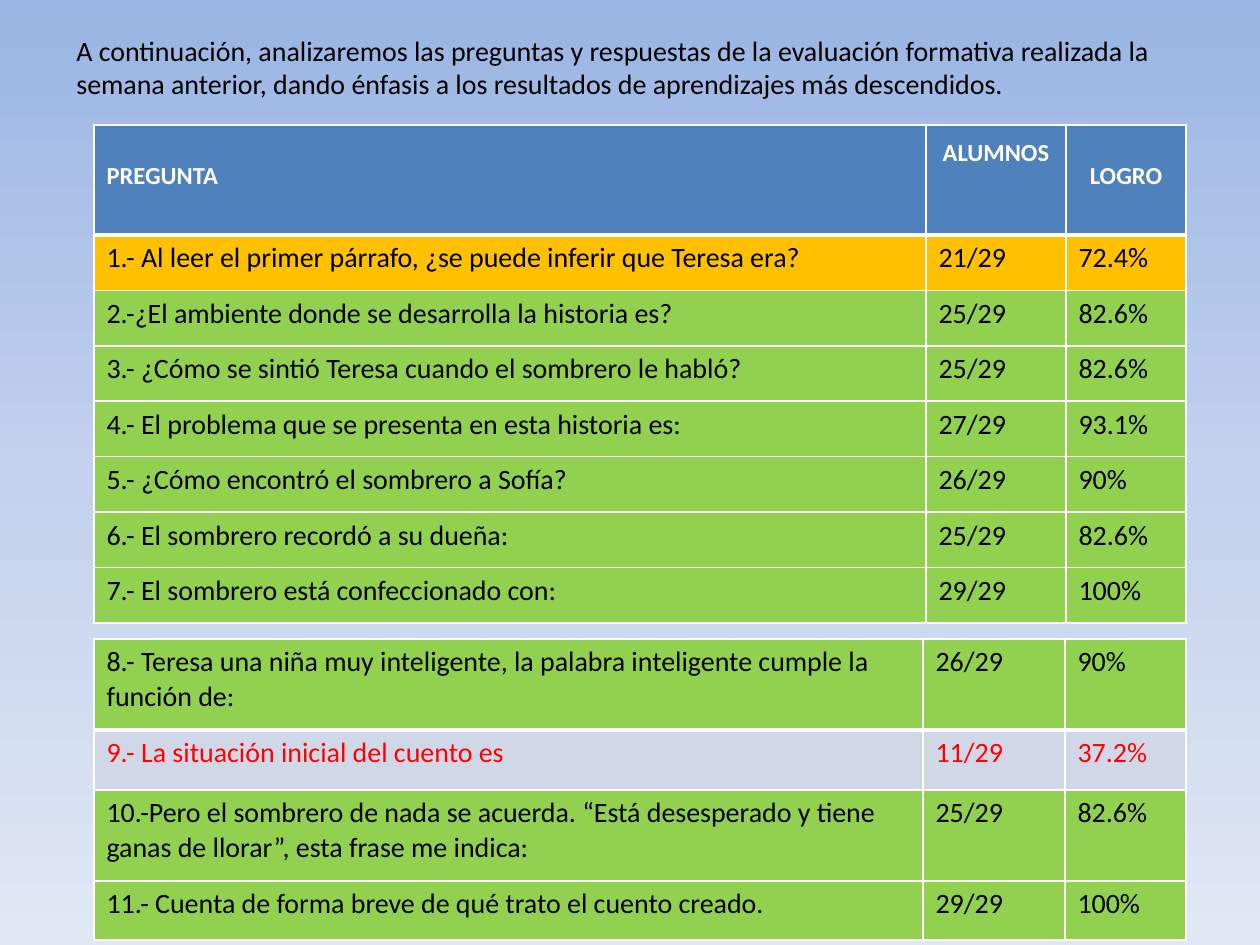
from lxml.etree import SubElement
from pptx import Presentation
from pptx.dml.color import RGBColor
from pptx.enum.text import PP_ALIGN
from pptx.oxml.ns import qn
from pptx.util import Emu, Pt

BLUE, GREEN, ORANGE, GRAY = "4F81BD", "92D050", "FFC000", "D0D8E8"
WHITE, BLACK, RED = "FFFFFF", "000000", "FF0000"


def px(length):
    return Emu(round(length * 914400 / 126))


def add_text(paragraph, text, size, color, bold=False):
    run = paragraph.add_run()
    run.text = text
    run.font.name = "Calibri"
    run.font.size = Pt(size)
    run.font.bold = bold
    run.font.color.rgb = RGBColor.from_string(color)


presentation = Presentation()
presentation.slide_width, presentation.slide_height = px(1260), px(945)
slide = presentation.slides.add_slide(presentation.slide_layouts[6])

# Background: three-stop vertical gradient
background = slide.background.fill
background.gradient()
background.gradient_angle = 270
stop_list = slide.element.xpath(".//a:gsLst")[0]
for stop in list(stop_list):
    stop_list.remove(stop)
for percent, color in [(0, "9AB5E4"), (50, "C2D1ED"), (100, "E1E8F5")]:
    stop = SubElement(stop_list, qn("a:gs"), pos=str(percent * 1000))
    SubElement(stop, qn("a:srgbClr"), val=color)

# Introduction
introduction = slide.shapes.add_textbox(px(64), px(27), px(1121), px(81)).text_frame
introduction.word_wrap = True
add_text(
    introduction.paragraphs[0],
    "A continuación, analizaremos las preguntas y respuestas de la evaluación formativa "
    "realizada la semana anterior, dando énfasis a los resultados de aprendizajes más descendidos.",
    16, BLACK,
)

# Table contents: question, students, achievement, fill, text color
first_rows = [
    ("PREGUNTA", "ALUMNOS", "LOGRO", BLUE, WHITE),
    ("1.- Al leer el primer párrafo, ¿se puede inferir que Teresa era?", "21/29", "72.4%", ORANGE, BLACK),
    ("2.-¿El ambiente donde se desarrolla la historia es?", "25/29", "82.6%", GREEN, BLACK),
    ("3.- ¿Cómo se sintió Teresa cuando el sombrero le habló?", "25/29", "82.6%", GREEN, BLACK),
    ("4.- El problema que se presenta en esta historia es:", "27/29", "93.1%", GREEN, BLACK),
    ("5.- ¿Cómo encontró el sombrero a Sofía?", "26/29", "90%", GREEN, BLACK),
    ("6.- El sombrero recordó a su dueña:", "25/29", "82.6%", GREEN, BLACK),
    ("7.- El sombrero está confeccionado con:", "29/29", "100%", GREEN, BLACK),
]
second_rows = [
    ("8.- Teresa una niña muy inteligente, la palabra inteligente cumple la función de:",
     "26/29", "90%", GREEN, BLACK),
    ("9.- La situación inicial del cuento es", "11/29", "37.2%", GRAY, RED),
    ("10.-Pero el sombrero de nada se acuerda. “Está desesperado y tiene ganas de llorar”, "
     "esta frase me indica:", "25/29", "82.6%", GREEN, BLACK),
    ("11.- Cuenta de forma breve de qué trato el cuento creado.", "29/29", "100%", GREEN, BLACK),
]
tables = [
    (125, [832, 140, 120], [110] + [388 / 7] * 7, first_rows),
    (639, [829, 142, 121], [91, 60, 91, 59], second_rows),
]
header_margins = [36, 13, 36]
header_alignments = [PP_ALIGN.LEFT, PP_ALIGN.CENTER, PP_ALIGN.CENTER]

# Both tables
for top, widths, heights, rows in tables:
    table = slide.shapes.add_table(
        len(rows), len(widths), px(94), px(top), px(sum(widths)), px(sum(heights))
    ).table
    table.first_row = table.horz_banding = False
    for column, width in zip(table.columns, widths):
        column.width = px(width)
    for row_index, (*texts, fill, color) in enumerate(rows):
        table.rows[row_index].height = px(heights[row_index])
        for column_index, text in enumerate(texts):
            cell = table.cell(row_index, column_index)
            properties = cell._tc.get_or_add_tcPr()
            # White borders, thicker below the first row
            for side in ("lnL", "lnR", "lnT", "lnB"):
                thick = (row_index, side) in [(0, "lnB"), (1, "lnT")]
                border = SubElement(properties, qn(f"a:{side}"), w=str(Pt(3 if thick else 1)))
                border_fill = SubElement(border, qn("a:solidFill"))
                SubElement(border_fill, qn("a:srgbClr"), val=WHITE)
            cell.fill.solid()
            cell.fill.fore_color.rgb = RGBColor.from_string(fill)
            paragraph = cell.text_frame.paragraphs[0]
            is_header = fill == BLUE
            if is_header:
                cell.margin_top = px(header_margins[column_index])
                paragraph.alignment = header_alignments[column_index]
            add_text(paragraph, text, 14 if is_header else 16, color, is_header)

presentation.save("out.pptx")
